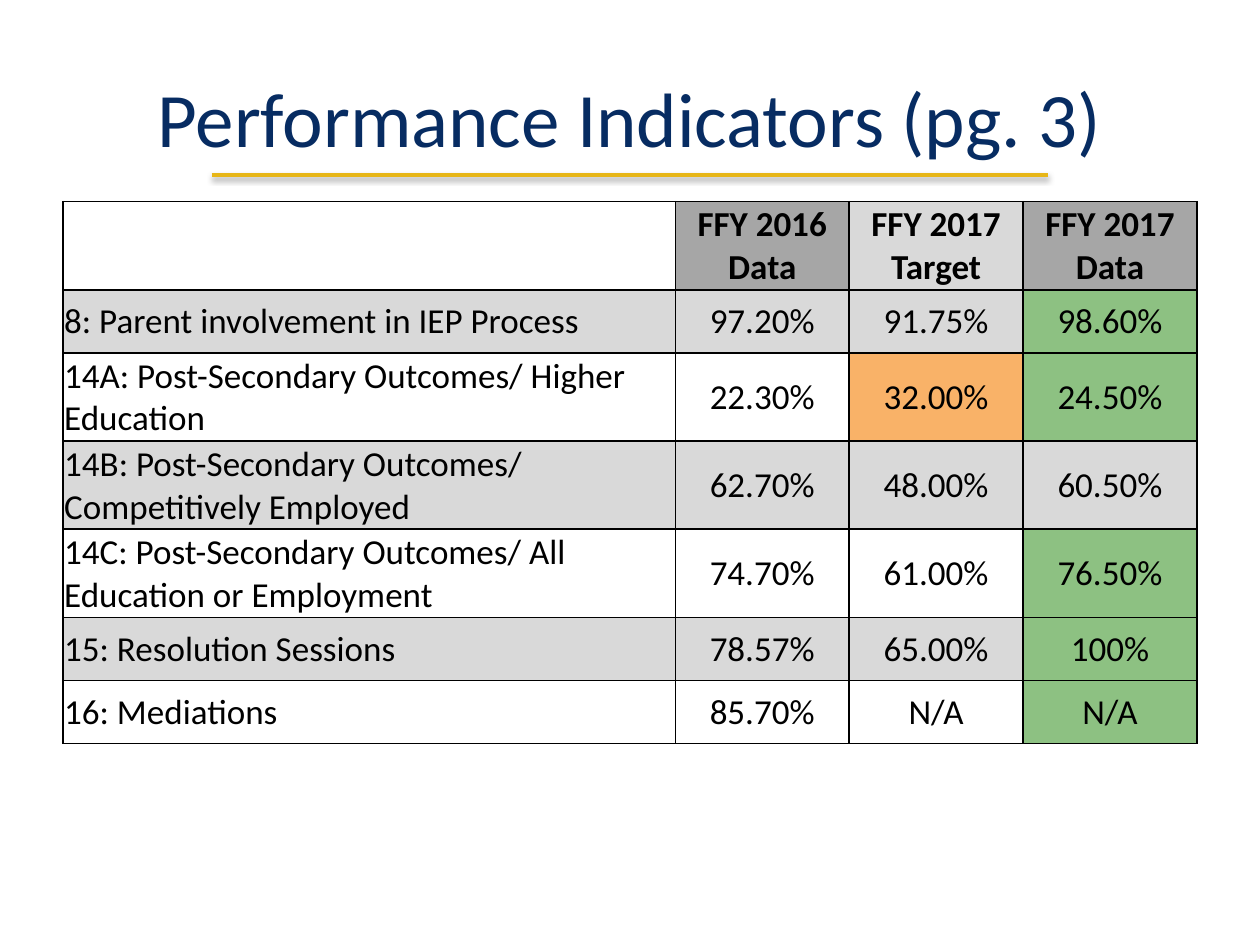
from pptx import Presentation
from pptx import util as u
from pptx.dml.color import RGBColor
from pptx.enum import shapes, text
from pptx.oxml import parse_xml
from pptx.oxml.ns import nsdecls

DARK, GREY, GREEN, ORANGE = "A6A6A6", "D9D9D9", "8DC182", "F9B268"
HEAD = ["", "FFY 2016 Data", "FFY 2017 Target", "FFY 2017 Data"]
ROWS = [
    ["8: Parent involvement in IEP Process", "97.20%", "91.75%", "98.60%"],
    ["14A: Post-Secondary Outcomes/ Higher Education", "22.30%", "32.00%", "24.50%"],
    ["14B: Post-Secondary Outcomes/ Competitively Employed", "62.70%", "48.00%", "60.50%"],
    ["14C: Post-Secondary Outcomes/ All Education or Employment", "74.70%", "61.00%", "76.50%"],
    ["15: Resolution Sessions", "78.57%", "65.00%", "100%"],
    ["16: Mediations", "85.70%", "N/A", "N/A"],
]
WIDTHS = [4.86, 1.38, 1.38, 1.38]
HEIGHTS = [0.7, 0.5, 0.7, 0.7, 0.7, 0.5, 0.5]
MARKS = {(row, 3): GREEN for row in (1, 2, 4, 5, 6)} | {(2, 2): ORANGE}
CELL = {
    "margin_left": u.Inches(0.01),
    "margin_right": u.Inches(0.01),
    "margin_top": u.Inches(0.01),
    "margin_bottom": 0,
    "vertical_anchor": text.MSO_ANCHOR.MIDDLE,
}
FRAME = {"word_wrap": True, "vertical_anchor": text.MSO_ANCHOR.MIDDLE}


def color(code):
    """Turn a hex string into a colour."""
    return RGBColor.from_string(code)


def apply(item, values):
    """Set each named attribute on an item."""
    for name, value in values.items():
        setattr(item, name, value)


def write(frame, words, size, code, bold=False, center=True):
    """Put one formatted paragraph into a text frame."""
    para = frame.paragraphs[0]
    para.alignment = text.PP_ALIGN.CENTER if center else text.PP_ALIGN.LEFT
    para.font.size = u.Pt(size)
    if words:
        run = para.add_run()
        run.text = words
        apply(run.font, {"name": "Calibri", "size": u.Pt(size), "bold": bold})
        run.font.color.rgb = color(code)


def add_title(slide, words):
    """Add the centred slide title."""
    box = slide.shapes.add_textbox(*map(u.Inches, (0.5, 0.3, 9, 1.25)))
    apply(box.text_frame, FRAME)
    write(box.text_frame, words, 44, "072C62")


def add_rule(slide):
    """Add the gold rule with its soft shadow."""
    ends = map(u.Inches, (1.68, 1.39, 8.32, 1.39))
    rule = slide.shapes.add_connector(shapes.MSO_CONNECTOR.STRAIGHT, *ends)
    rule.line.width = u.Pt(2)
    rule.line.color.rgb = color("E7B617")
    rule._element.spPr.append(parse_xml(
        f'<a:effectLst {nsdecls("a")}><a:outerShdw blurRad="{u.Pt(3.1)}" '
        f'dist="{u.Pt(1.6)}" dir="5400000" rotWithShape="0">'
        '<a:srgbClr val="000000"><a:alpha val="38000"/></a:srgbClr>'
        '</a:outerShdw></a:effectLst>'))


def add_edges(cell):
    """Draw a thin black border on all four sides of a cell."""
    props = cell._tc.get_or_add_tcPr()
    for side in ("lnL", "lnR", "lnT", "lnB"):
        props.append(parse_xml(
            f'<a:{side} {nsdecls("a")} w="{u.Pt(1)}"><a:solidFill>'
            f'<a:srgbClr val="000000"/></a:solidFill></a:{side}>'))


def shade(row, col):
    """Choose the fill of a table cell."""
    if row == 0:
        return ("FFFFFF", DARK, GREY, DARK)[col]
    return MARKS.get((row, col), GREY if row % 2 else "FFFFFF")


def add_grid(slide):
    """Add the table of indicators."""
    data = [HEAD] + ROWS
    place = map(u.Inches, (0.5, 1.6, sum(WIDTHS), sum(HEIGHTS)))
    table = slide.shapes.add_table(len(data), len(HEAD), *place).table
    for col, width in zip(table.columns, WIDTHS):
        col.width = u.Inches(width)
    for row, height in zip(table.rows, HEIGHTS):
        row.height = u.Inches(height)
    for r, line in enumerate(data):
        for c, words in enumerate(line):
            cell = table.cell(r, c)
            apply(cell, CELL)
            add_edges(cell)
            cell.fill.solid()
            cell.fill.fore_color.rgb = color(shade(r, c))
            write(cell.text_frame, words, 20, "000000", r == 0, c > 0)


def main():
    """Build and save the slide."""
    deck = Presentation()
    apply(deck, {"slide_width": u.Inches(10), "slide_height": u.Inches(7.5)})
    slide = deck.slides.add_slide(deck.slide_layouts[6])
    add_rule(slide)
    add_title(slide, "Performance Indicators (pg. 3)")
    add_grid(slide)
    deck.save("out.pptx")


if __name__ == "__main__":
    main()
